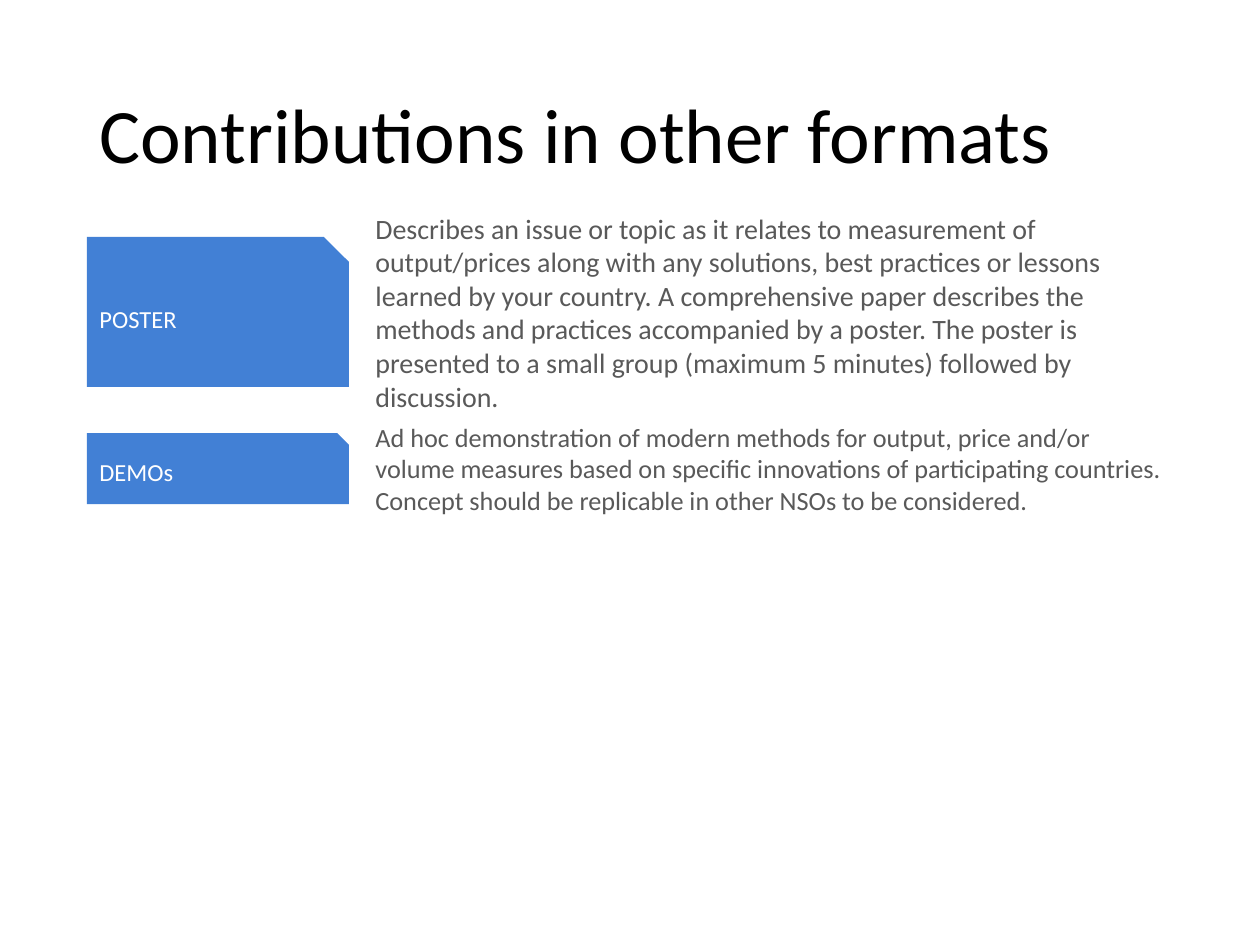
from dataclasses import dataclass

from pptx import Presentation
from pptx.dml.color import RGBColor
from pptx.enum.shapes import MSO_SHAPE as Shape
from pptx.enum.text import MSO_ANCHOR as Anchor, MSO_AUTO_SIZE as AutoSize, PP_ALIGN as Align
from pptx.shapes.autoshape import Shape as AutoShape
from pptx.slide import Slide
from pptx.util import Emu, Pt

PX_PER_INCH = 126


def px(count: int) -> Emu:
    return Emu(round(count * 914400 / PX_PER_INCH))


@dataclass(frozen=True)
class Theme:
    font: str = "Calibri"
    title: RGBColor = RGBColor.from_string("000000")
    body: RGBColor = RGBColor.from_string("595959")
    label: RGBColor = RGBColor.from_string("FFFFFF")
    label_fill: RGBColor = RGBColor.from_string("4280D5")
    title_size: int = 44
    label_size: int = 14


@dataclass(frozen=True)
class Format:
    label: str
    description: str
    top: int
    height: int
    size: int


THEME = Theme()
LEFT = 87
LABEL_WIDTH = 262
DESCRIPTION_LEFT, DESCRIPTION_WIDTH = 363, 814

FORMATS = [
    Format(
        "POSTER",
        "Describes an issue or topic as it relates to measurement of output/prices along "
        "with any solutions, best practices or lessons learned by your country. A "
        "comprehensive paper describes the methods and practices accompanied by a poster. "
        "The poster is presented to a small group (maximum 5 minutes) followed by discussion.",
        top=237, height=150, size=16,
    ),
    Format(
        "DEMOs",
        "Ad hoc demonstration of modern methods for output, price and/or volume measures "
        "based on specific innovations of participating countries. Concept should be "
        "replicable in other NSOs to be considered.",
        top=433, height=71, size=15,
    ),
]


def set_text(box: AutoShape, text: str, size: int, color: RGBColor, spacing: float = 1.0) -> None:
    """Fill a box with one left-aligned, vertically centred paragraph."""
    frame = box.text_frame
    frame.text = text
    frame.word_wrap = True
    frame.auto_size = AutoSize.NONE
    frame.vertical_anchor = Anchor.MIDDLE
    para = frame.paragraphs[0]
    para.alignment = Align.LEFT
    para.line_spacing = spacing
    font = para.runs[0].font
    font.name = THEME.font
    font.size = Pt(size)
    font.color.rgb = color


def draw_title(page: Slide, text: str) -> None:
    box = page.shapes.add_textbox(px(LEFT), px(47), px(1086), px(183))
    set_text(box, text, THEME.title_size, THEME.title, spacing=0.9)


def draw_format(page: Slide, item: Format) -> None:
    top, height = px(item.top), px(item.height)
    label = page.shapes.add_shape(
        Shape.SNIP_1_RECTANGLE, px(LEFT), top, px(LABEL_WIDTH), height
    )
    label.shadow.inherit = False
    label.fill.solid()
    label.fill.fore_color.rgb = THEME.label_fill
    label.line.fill.background()
    set_text(label, item.label, THEME.label_size, THEME.label)

    description = page.shapes.add_textbox(
        px(DESCRIPTION_LEFT), top, px(DESCRIPTION_WIDTH), height
    )
    set_text(description, item.description, item.size, THEME.body)


def main() -> None:
    deck = Presentation()
    deck.slide_width, deck.slide_height = px(1260), px(945)
    page = deck.slides.add_slide(deck.slide_layouts[6])
    draw_title(page, "Contributions in other formats")
    for item in FORMATS:
        draw_format(page, item)
    deck.save("out.pptx")


if __name__ == "__main__":
    main()
